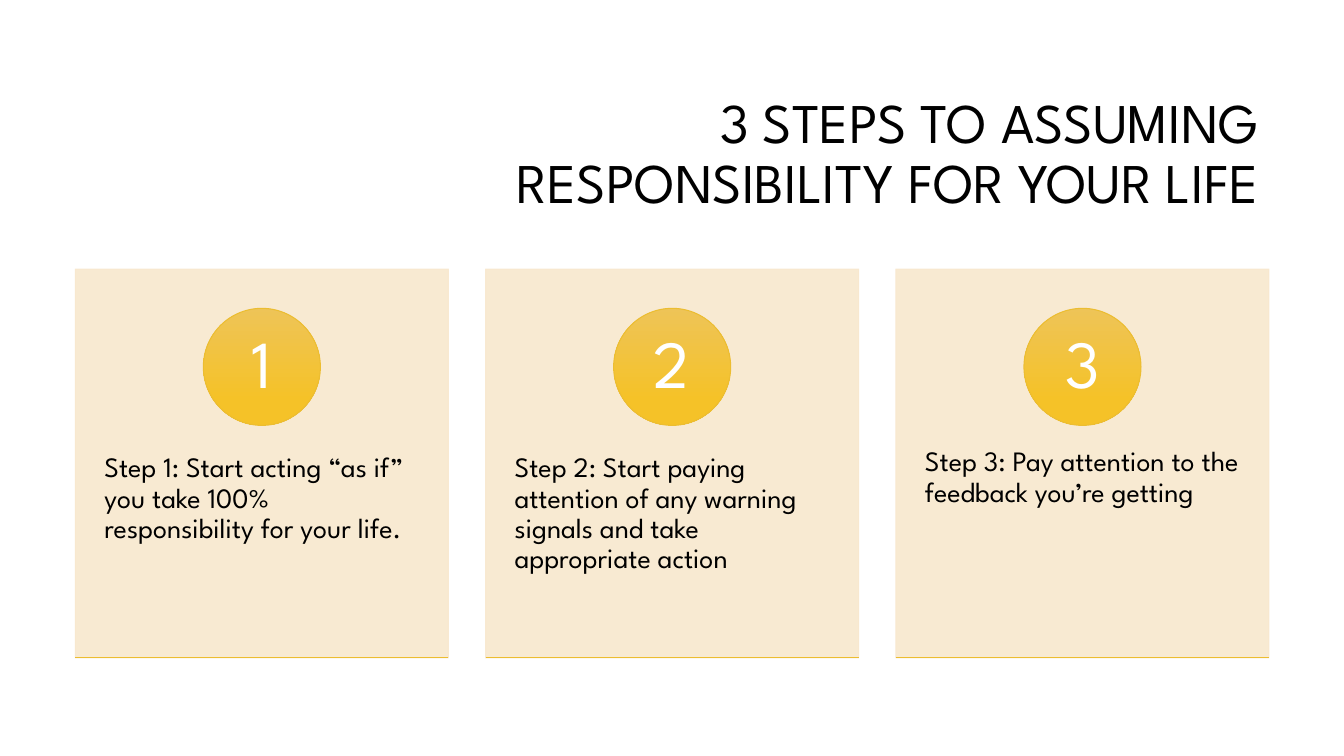
from lxml.etree import SubElement
from pptx import Presentation
from pptx.dml.color import RGBColor
from pptx.enum.shapes import MSO_CONNECTOR as Connector, MSO_SHAPE as Shape
from pptx.enum.text import MSO_ANCHOR as Anchor, PP_ALIGN as Align
from pptx.oxml.ns import qn
from pptx.util import Cm, Pt

COLORS = {
    "text": "000000", "number": "FFFFFF", "card": "F8E8CE",
    "gold_top": "EEC457", "gold_bottom": "F5C228", "gold_line": "ECBD31",
}
FONT = "League Spartan"
TITLE = "3 STEPS TO ASSUMING RESPONSIBILITY FOR YOUR LIFE"
STEPS = [
    "Step 1: Start acting “as if” you take 100% responsibility for your life.",
    "Step 2: Start paying attention of any warning signals and take appropriate action",
    "Step 3: Pay attention to the feedback you’re getting",
]
CARD_LEFT, CARD_TOP, CARD_WIDTH, CARD_HEIGHT = 1.9, 6.78, 9.4, 9.8
CARD_PITCH = 10.34
CIRCLE_TOP, CIRCLE_SIZE, NUMBER_SIZE = 7.77, 2.95, 2.08


def color(name):
    return RGBColor.from_string(COLORS[name])


def add_text(page, text, bounds, size, color_name="text", align=Align.LEFT,
             anchor=Anchor.TOP, insets=(0.25, 0.13)):
    box = page.shapes.add_textbox(*map(Cm, bounds))
    frame = box.text_frame
    frame.word_wrap = True
    frame.vertical_anchor = anchor
    frame.margin_left = frame.margin_right = Cm(insets[0])
    frame.margin_top = frame.margin_bottom = Cm(insets[1])
    para = frame.paragraphs[0]
    para.text = text
    para.alignment = align
    para.line_spacing = 0.9
    para.font.name = FONT
    para.font.size = Pt(size)
    para.font.color.rgb = color(color_name)


def add_panel(page, left):
    bounds = (left, CARD_TOP, CARD_WIDTH, CARD_HEIGHT)
    panel = page.shapes.add_shape(Shape.RECTANGLE, *map(Cm, bounds))
    panel.shadow.inherit = False
    panel.fill.solid()
    panel.fill.fore_color.rgb = color("card")
    panel.line.color.rgb = color("card")
    panel.line.width = Pt(0.75)
    for shade in panel._element.spPr.iter(qn("a:srgbClr")):
        SubElement(shade, qn("a:alpha"), val="90000")


def add_circle(page, left):
    bounds = (left, CIRCLE_TOP, CIRCLE_SIZE, CIRCLE_SIZE)
    circle = page.shapes.add_shape(Shape.OVAL, *map(Cm, bounds))
    circle.shadow.inherit = False
    circle.fill.gradient()
    circle.fill.gradient_angle = 270
    golds = [("gold_top", 0), ("gold_bottom", 0.78)]
    for stop, (name, position) in zip(circle.fill.gradient_stops, golds):
        stop.color.rgb = color(name)
        stop.position = position
    circle.line.color.rgb = color("gold_line")
    circle.line.width = Pt(0.75)


def add_baseline(page, left):
    bottom = CARD_TOP + CARD_HEIGHT
    ends = (left, bottom, left + CARD_WIDTH, bottom)
    baseline = page.shapes.add_connector(Connector.STRAIGHT, *map(Cm, ends))
    baseline.line.color.rgb = color("gold_line")
    baseline.line.width = Pt(0.75)
    SubElement(baseline._element.spPr, qn("a:effectLst"))


def add_step(page, number, text, left):
    add_panel(page, left)
    add_text(page, text, (left, 10.52, CARD_WIDTH, 5.89), 20, insets=(0.73, 0.91))
    add_circle(page, left + (CARD_WIDTH - CIRCLE_SIZE) / 2)
    number_left = left + (CARD_WIDTH - NUMBER_SIZE) / 2
    number_top = CIRCLE_TOP + (CIRCLE_SIZE - NUMBER_SIZE) / 2
    add_text(page, str(number), (number_left, number_top, NUMBER_SIZE, NUMBER_SIZE),
             48, "number", Align.CENTER, Anchor.MIDDLE, (0.23, 0.03))
    add_baseline(page, left)


def main():
    """Build the slide of three numbered step cards."""
    deck = Presentation()
    deck.slide_width, deck.slide_height = Cm(33.87), Cm(19.05)
    page = deck.slides.add_slide(deck.slide_layouts[6])
    add_text(page, TITLE, (8.05, 2.13, 23.93, 3.58), 40,
             align=Align.RIGHT, anchor=Anchor.MIDDLE)
    for index, text in enumerate(STEPS):
        add_step(page, index + 1, text, CARD_LEFT + index * CARD_PITCH)
    deck.save("out.pptx")


if __name__ == "__main__":
    main()
